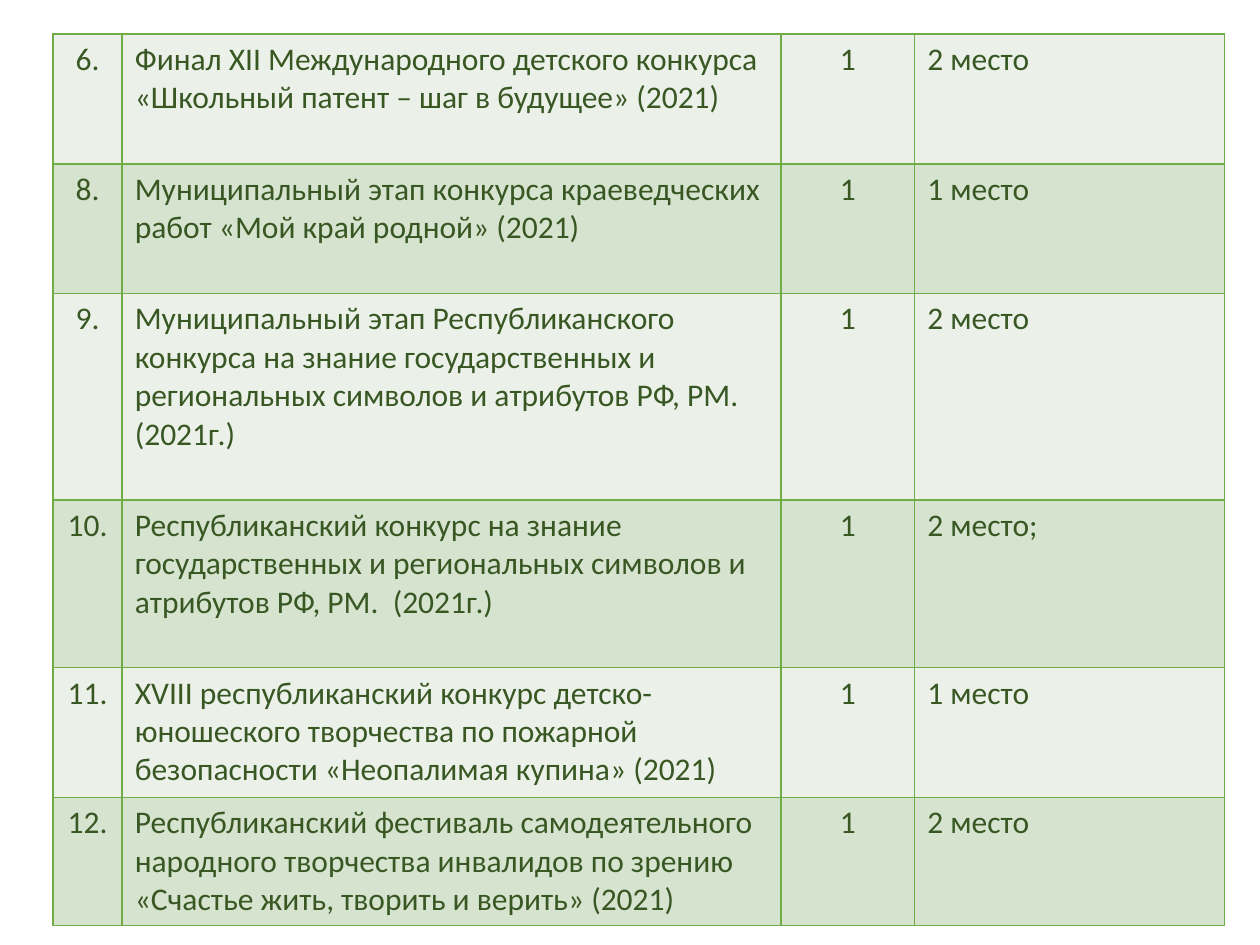
from lxml import etree
from pptx import Presentation
from pptx.dml.color import RGBColor
from pptx.enum.text import PP_ALIGN
from pptx.oxml.ns import qn
from pptx.util import Inches, Pt

LEFT, CENTER = PP_ALIGN.LEFT, PP_ALIGN.CENTER
BORDER, TEXT = "70AD47", "385723"
BANDS = ["EBF1E9", "D5E3CF"]


def rgb(value):
    return RGBColor.from_string(value)


def add_borders(cell, color, width):
    properties = cell._tc.get_or_add_tcPr()
    for position, side in enumerate(["a:lnL", "a:lnR", "a:lnT", "a:lnB"]):
        line = etree.Element(qn(side), w=str(width))
        fill = etree.SubElement(line, qn("a:solidFill"))
        etree.SubElement(fill, qn("a:srgbClr"), val=color)
        properties.insert(position, line)


# Number, contest, participants, result
contests = [
    ("6.", "Финал XII Международного детского конкурса «Школьный патент – шаг в будущее» (2021)",
     "1", "2 место"),
    ("8.", "Муниципальный этап конкурса краеведческих работ «Мой край родной» (2021)",
     "1", "1 место"),
    ("9.", "Муниципальный этап Республиканского конкурса на знание государственных и "
     "региональных символов и атрибутов РФ, РМ.  (2021г.)", "1", "2 место"),
    ("10.", "Республиканский конкурс на знание государственных и региональных символов и "
     "атрибутов РФ, РМ.  (2021г.)", "1", "2 место;"),
    ("11.", "XVIII республиканский конкурс детско-юношеского творчества по пожарной "
     "безопасности «Неопалимая купина» (2021)", "1", "1 место"),
    ("12.", "Республиканский фестиваль самодеятельного народного творчества инвалидов по "
     "зрению «Счастье жить, творить и верить» (2021)", "1", "2 место"),
]
column_widths = [0.55, 5.23, 1.06, 2.46]
row_heights = [1.03, 1.03, 1.64, 1.33, 1.03, 0.97]
alignments = [CENTER, LEFT, CENTER, LEFT]
font_format = {"name": "Calibri", "size": Pt(18), "bold": False}

# Slide
prs = Presentation()
prs.slide_width, prs.slide_height = Inches(10), Inches(7.5)
slide = prs.slides.add_slide(prs.slide_layouts[6])

# Results table
results = slide.shapes.add_table(
    len(contests), len(column_widths), Inches(0.42), Inches(0.27),
    Inches(sum(column_widths)), Inches(sum(row_heights))).table
results.first_row = False
for column, width in zip(results.columns, column_widths):
    column.width = Inches(width)
for row, height in zip(results.rows, row_heights):
    row.height = Inches(height)

# Cell contents, with alternating row fills
for index, (row, contest) in enumerate(zip(results.rows, contests)):
    for cell, content, alignment in zip(row.cells, contest, alignments):
        cell.fill.solid()
        cell.fill.fore_color.rgb = rgb(BANDS[index % 2])
        add_borders(cell, BORDER, Pt(1))
        cell.text = content
        paragraph = cell.text_frame.paragraphs[0]
        paragraph.alignment = alignment
        font = paragraph.runs[0].font
        for attribute, value in font_format.items():
            setattr(font, attribute, value)
        font.color.rgb = rgb(TEXT)

prs.save("out.pptx")
